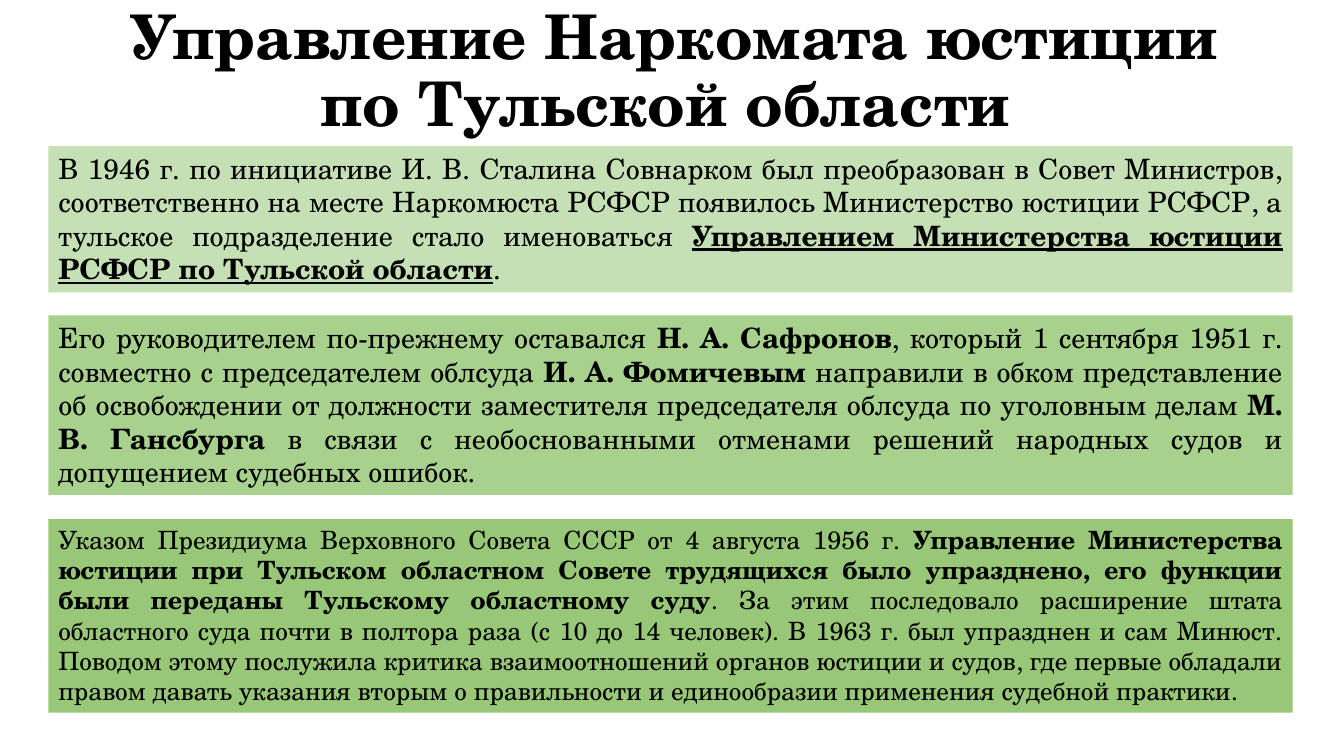
from pptx import Presentation
from pptx.dml.color import RGBColor
from pptx.enum.shapes import MSO_SHAPE
from pptx.enum.text import MSO_ANCHOR, MSO_AUTO_SIZE, PP_ALIGN
from pptx.util import Inches

from pptx.util import Pt

FONT = "TeX Gyre Schola"
COLORS = {
    "text": "000000",
    "light": "C5E0B4",
    "medium": "A9D18E",
    "dark": "97C777",
}
TITLE = "Управление Наркомата юстиции по Тульской области "
PANEL_LEFT, PANEL_WIDTH = 0.48, 12.34
PANELS = [
    (1.45, 1.45, "light", 20, [
        ("В 1946 г. по инициативе И. В. Сталина Совнарком был преобразован в Совет Министров, "
         "соответственно на месте Наркомюста РСФСР появилось Министерство юстиции РСФСР, "
         "а тульское подразделение стало именоваться ", {}),
        ("Управлением Министерства юстиции РСФСР по Тульской области",
         {"bold": True, "underline": True}),
        (".", {}),
    ]),
    (3.13, 1.78, "medium", 20, [
        ("Его руководителем по-прежнему оставался ", {}),
        ("Н. А. Сафронов", {"bold": True}),
        (", который 1 сентября 1951 г. совместно с председателем облсуда ", {}),
        ("И. А. Фомичевым ", {"bold": True}),
        ("направили в обком представление об освобождении от должности заместителя "
         "председателя облсуда по уголовным делам ", {}),
        ("М. В. Гансбурга", {"bold": True}),
        (" в связи с необоснованными отменами решений народных судов "
         "и допущением судебных ошибок.", {}),
    ]),
    (5.15, 1.92, "dark", 18, [
        ("Указом Президиума Верховного Совета СССР от 4 августа 1956 г. ", {}),
        ("Управление Министерства юстиции при Тульском областном Совете трудящихся было "
         "упразднено, его функции были переданы Тульскому областному суду", {"bold": True}),
        (". За этим последовало расширение штата областного суда почти в полтора раза "
         "(с 10 до 14 человек). В 1963 г. был упразднен и сам Минюст. Поводом этому послужила "
         "критика взаимоотношений органов юстиции и судов, где первые обладали правом давать "
         "указания вторым о правильности и единообразии применения судебной практики.", {}),
    ]),
]


def add_text(paragraph, text, size, bold=False, underline=False):
    """Append a formatted run to the paragraph."""
    run = paragraph.add_run()
    run.text = text
    font = run.font
    font.name = FONT
    font.size = Pt(size)
    font.bold = bold
    font.underline = underline
    font.color.rgb = RGBColor.from_string(COLORS["text"])


def place_title(slide, left, top, width, height):
    """Move the title placeholder into its box and fill it."""
    title = slide.shapes.title
    title.left, title.top = Inches(left), Inches(top)
    title.width, title.height = Inches(width), Inches(height)
    frame = title.text_frame
    frame.word_wrap = True
    frame.auto_size = MSO_AUTO_SIZE.NONE
    frame.vertical_anchor = MSO_ANCHOR.MIDDLE
    paragraph = frame.paragraphs[0]
    paragraph.alignment = PP_ALIGN.CENTER
    paragraph.line_spacing = 0.9
    add_text(paragraph, TITLE, 44, bold=True)


def add_panel(slide, left, top, width, height, color, size, runs):
    """Draw a filled panel holding one justified paragraph."""
    panel = slide.shapes.add_shape(
        MSO_SHAPE.RECTANGLE, Inches(left), Inches(top), Inches(width), Inches(height))
    panel.shadow.inherit = False
    panel.fill.solid()
    panel.fill.fore_color.rgb = RGBColor.from_string(COLORS[color])
    panel.line.fill.background()
    frame = panel.text_frame
    frame.word_wrap = True
    frame.auto_size = MSO_AUTO_SIZE.SHAPE_TO_FIT_TEXT
    frame.vertical_anchor = MSO_ANCHOR.TOP
    paragraph = frame.paragraphs[0]
    paragraph.alignment = PP_ALIGN.JUSTIFY
    for text, style in runs:
        add_text(paragraph, text, size, **style)


def main():
    """Build and save the presentation."""
    presentation = Presentation()
    presentation.slide_width, presentation.slide_height = Inches(13.33), Inches(7.5)
    slide = presentation.slides.add_slide(presentation.slide_layouts[5])
    place_title(slide, 0.94, 0, 11.5, 1.45)
    for top, height, color, size, runs in PANELS:
        add_panel(slide, PANEL_LEFT, top, PANEL_WIDTH, height, color, size, runs)
    presentation.save("out.pptx")


if __name__ == "__main__":
    main()
